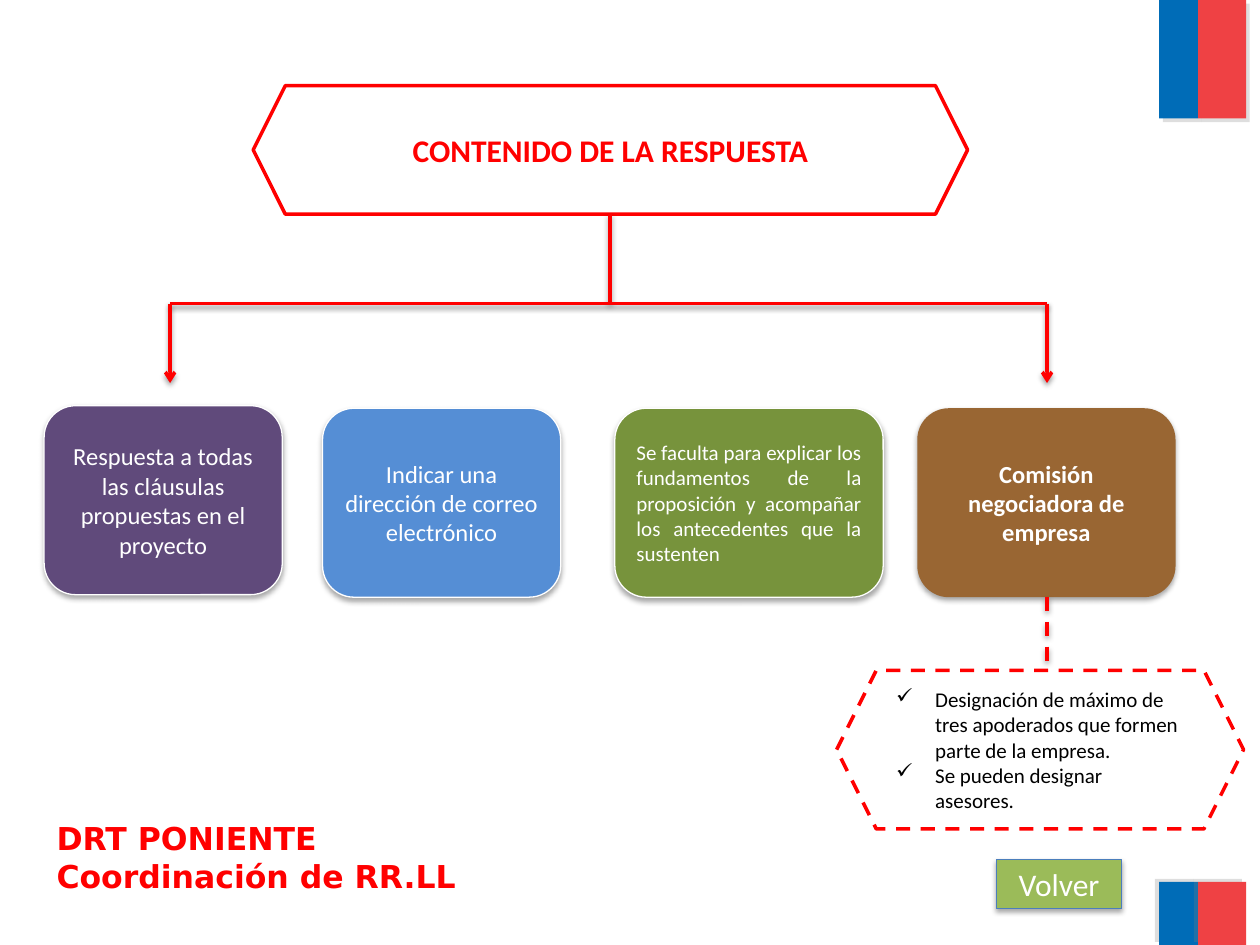
from lxml import etree
from pptx import Presentation
from pptx.dml.color import RGBColor
from pptx.enum.dml import MSO_LINE
from pptx.enum.shapes import MSO_CONNECTOR, MSO_SHAPE
from pptx.enum.text import MSO_ANCHOR, PP_ALIGN
from pptx.oxml.ns import qn
from pptx.util import Inches, Pt

RECT, ROUND, HEX = MSO_SHAPE.RECTANGLE, MSO_SHAPE.ROUNDED_RECTANGLE, MSO_SHAPE.HEXAGON
CENTER, JUSTIFY, LEFT = PP_ALIGN.CENTER, PP_ALIGN.JUSTIFY, PP_ALIGN.LEFT
MIDDLE, DASH, STRAIGHT = MSO_ANCHOR.MIDDLE, MSO_LINE.DASH, MSO_CONNECTOR.STRAIGHT

COLORS = {
    "red": "FF0000", "white": "FFFFFF", "black": "000000", "purple": "604A7B",
    "blue": "558ED5", "olive": "77933C", "brown": "996633", "green": "9BBB59",
    "button_edge": "4B7EBC", "flag_blue": "006CB7", "flag_red": "EF4144", "gray": "808080",
}

# Content
TITLE = "CONTENIDO DE LA RESPUESTA"
# text, left, top, width, fill, edge, size, bold, alignment
BOXES = [
    ("Respuesta a todas las cláusulas propuestas en el proyecto",
     0.35, 3.22, 1.89, "purple", "white", 14, False, CENTER),
    ("Indicar una dirección de correo electrónico",
     2.56, 3.24, 1.89, "blue", "white", 14, False, CENTER),
    ("Se faculta para explicar los fundamentos de la proposición y acompañar "
     "los antecedentes que la sustenten",
     4.88, 3.24, 2.13, "olive", "white", 12, False, JUSTIFY),
    ("Comisión negociadora de empresa",
     7.28, 3.24, 2.05, "brown", None, 14, True, CENTER),
]
NOTES = ["Designación de máximo de tres apoderados que formen parte de la empresa.",
         "Se pueden designar asesores."]
FOOTER = "DRT PONIENTE\vCoordinación de RR.LL"
BUTTON = "Volver"

# Layout, in inches
TITLE_AT = (2.01, 0.68, 5.67, 1.02)
NOTES_AT = (6.64, 5.32, 3.23, 1.26)
BOX_H = 1.5
TRUNK_X, LEFT_X, RIGHT_X = 4.84, 1.35, 8.31
BRANCH_Y, ARROW_Y = 2.41, 3.04

# Shadows: colour, opacity %, blur pt, distance pt, angle
BOX_SHADOW = ("black", 35, 3.1, 1.8, 90)
LINE_SHADOW = ("black", 38, 3.1, 1.6, 90)


def rgb(name):
    return RGBColor.from_string(COLORS[name])


def add_shadow(shape, color, opacity, blur, dist, angle):
    effects = etree.SubElement(shape._element.spPr, qn("a:effectLst"))
    shadow = etree.SubElement(effects, qn("a:outerShdw"), blurRad=str(Pt(blur)),
                              dist=str(Pt(dist)), dir=str(angle * 60000), rotWithShape="0")
    clr = etree.SubElement(shadow, qn("a:srgbClr"), val=COLORS[color])
    etree.SubElement(clr, qn("a:alpha"), val=str(opacity * 1000))


def add_block(s, kind, at, fill, edge=None, width=0.75, dash=None, shadow=None):
    sp = s.shapes.add_shape(kind, *map(Inches, at))
    sp.fill.solid()
    sp.fill.fore_color.rgb = rgb(fill)
    if edge:
        sp.line.color.rgb = rgb(edge)
        sp.line.width = Pt(width)
        if dash:
            sp.line.dash_style = dash
    else:
        sp.line.fill.background()
    if shadow:
        add_shadow(sp, *shadow)
    else:
        sp.shadow.inherit = False
    return sp


def write(sp, text, size, color, bold=False, align=CENTER, font="Calibri", wrap=True):
    tf = sp.text_frame
    tf.text = text
    tf.word_wrap = wrap
    tf.vertical_anchor = MIDDLE
    for p in tf.paragraphs:
        p.alignment = align
        for r in p.runs:
            r.font.name, r.font.size, r.font.bold = font, Pt(size), bold
            r.font.color.rgb = rgb(color)
    return tf


def add_line(s, x1, y1, x2, y2, arrow=False, dash=None):
    line = s.shapes.add_connector(STRAIGHT, *map(Inches, (x1, y1, x2, y2)))
    line.line.color.rgb = rgb("red")
    line.line.width = Pt(2)
    if dash:
        line.line.dash_style = dash
    if arrow:
        etree.SubElement(line.line._get_or_add_ln(), qn("a:tailEnd"), type="arrow")
    add_shadow(line, *LINE_SHADOW)


def main():
    prs = Presentation()
    prs.slide_width, prs.slide_height = Inches(10), Inches(7.5)
    s = prs.slides.add_slide(prs.slide_layouts[5])

    # Corner bars
    for top, height, angle in ((0, 0.94, 45), (7, 0.5, 215)):
        for left, width, fill in ((9.2, 0.31, "flag_blue"), (9.51, 0.38, "flag_red")):
            add_block(s, RECT, (left, top, width, height), fill,
                      shadow=("gray", 25, 0, 3, angle))

    # Title in its hexagon
    add_block(s, HEX, TITLE_AT, "white", "red", 2)
    title = s.shapes.title
    title.left, title.top, title.width, title.height = map(Inches, TITLE_AT)
    write(title, TITLE, 18, "red", True)
    s.shapes._spTree.append(title._element)

    # Branching lines
    add_line(s, TRUNK_X, TITLE_AT[1] + TITLE_AT[3], TRUNK_X, BRANCH_Y)
    add_line(s, LEFT_X, BRANCH_Y, RIGHT_X, BRANCH_Y)
    for x in (LEFT_X, RIGHT_X):
        add_line(s, x, BRANCH_Y, x, ARROW_Y, arrow=True)

    # Four boxes
    for text, left, top, width, fill, edge, size, bold, align in BOXES:
        box = add_block(s, ROUND, (left, top, width, BOX_H), fill, edge, shadow=BOX_SHADOW)
        write(box, text, size, "white", bold, align)

    # Checked notes under the last box
    add_line(s, RIGHT_X, BOXES[-1][2] + BOX_H, RIGHT_X, NOTES_AT[1], dash=DASH)
    notes = add_block(s, HEX, NOTES_AT, "white", "red", 2, DASH)
    tf = write(notes, "\n".join(NOTES), 12, "black", align=LEFT)
    for p in tf.paragraphs:
        pPr = p._p.get_or_add_pPr()
        pPr.set("marL", str(Inches(0.31)))
        pPr.set("indent", str(-Inches(0.31)))
        etree.SubElement(pPr, qn("a:buChar"), char="✓")

    # Button and footer
    button = add_block(s, RECT, (7.91, 6.82, 0.99, 0.39), "green", "button_edge",
                       shadow=BOX_SHADOW)
    write(button, BUTTON, 18, "white")
    footer = s.shapes.add_textbox(*map(Inches, (0.35, 6.45, 3.39, 1.01)))
    tf = write(footer, FOOTER, 18, "red", True, LEFT, "DejaVu Sans", wrap=False)
    tf.vertical_anchor = MSO_ANCHOR.TOP

    prs.save("out.pptx")


if __name__ == "__main__":
    main()
